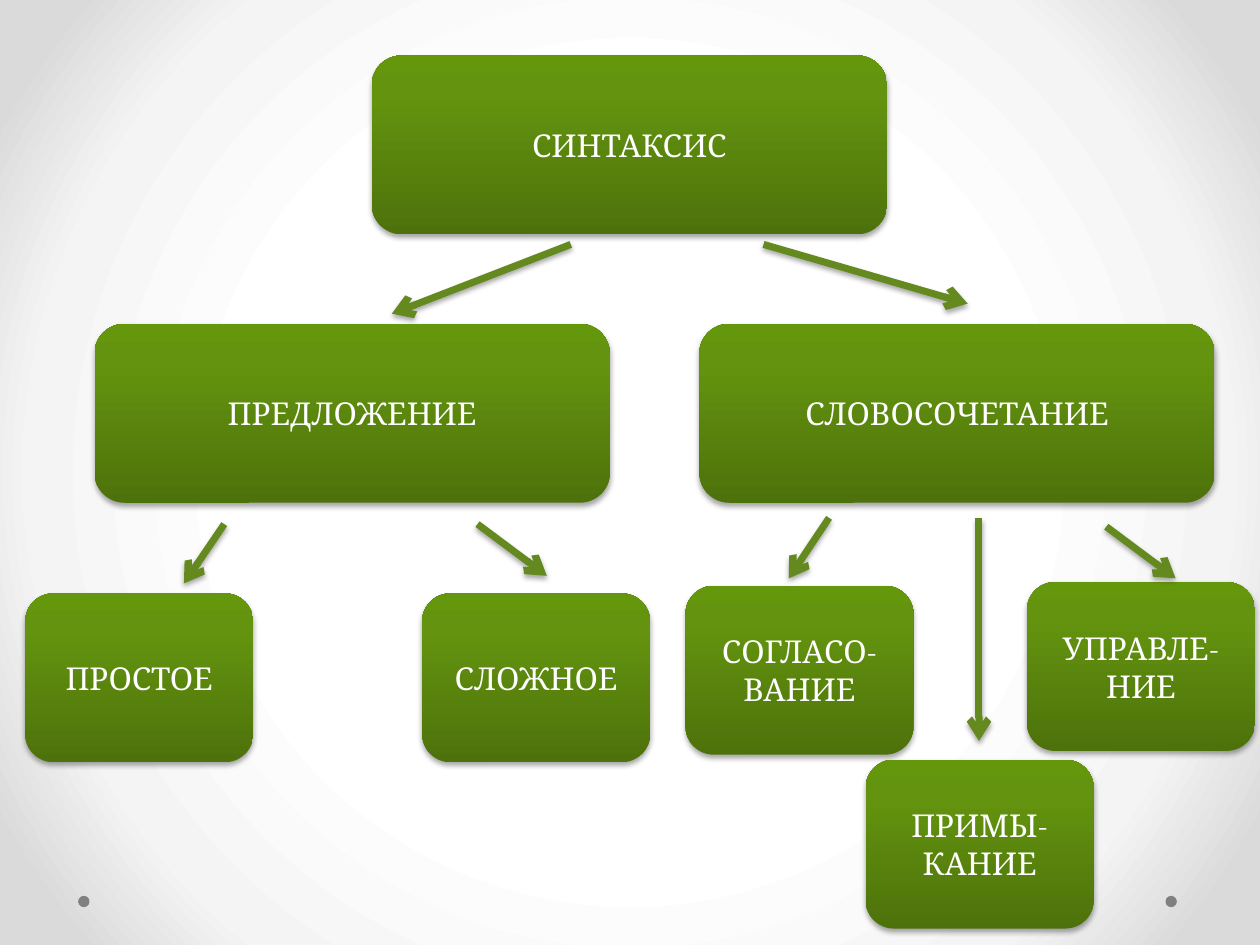
from lxml import etree
from pptx import Presentation
from pptx.dml.color import RGBColor
from pptx.enum.shapes import MSO_CONNECTOR, MSO_SHAPE
from pptx.enum.text import PP_ALIGN
from pptx.oxml import parse_xml
from pptx.oxml.ns import nsdecls, qn
from pptx.util import Inches, Pt

ROUNDED = MSO_SHAPE.ROUNDED_RECTANGLE
OVAL = MSO_SHAPE.OVAL
STRAIGHT = MSO_CONNECTOR.STRAIGHT
CENTER = PP_ALIGN.CENTER

WHITE = RGBColor(0xFF, 0xFF, 0xFF)
PALE_GRAY = RGBColor(0xF4, 0xF4, 0xF4)
LIGHT_GRAY = RGBColor(0xDA, 0xDA, 0xDA)
DOT_GRAY = RGBColor(0x80, 0x80, 0x80)
BLACK = RGBColor(0, 0, 0)
DARK_GREEN = RGBColor(0x4D, 0x72, 0x0B)
GREEN = RGBColor(0x64, 0x94, 0x0F)
BRIGHT_GREEN = RGBColor(0x65, 0x97, 0x0C)
ARROW_GREEN = RGBColor(0x63, 0x89, 0x1F)

BOX_STOPS = [(0, DARK_GREEN), (80, GREEN), (100, BRIGHT_GREEN)]
BACKGROUND_STOPS = [(50, WHITE), (76, PALE_GRAY), (92, LIGHT_GRAY)]
UPWARD = '<a:lin ang="16200000" scaled="0"/>'
FROM_CENTER = ('<a:path path="circle"><a:fillToRect l="50000" t="50000" '
               'r="50000" b="50000"/></a:path>')

PARENT_SIZE = (4.09, 1.42)
CHILD_SIZE = (1.81, 1.34)


def gradient(stops, direction):
    """Return a gradient fill element."""
    stop_list = "".join(
        f'<a:gs pos="{position * 1000}"><a:srgbClr val="{color}"/></a:gs>'
        for position, color in stops)
    return parse_xml(f'<a:gradFill {nsdecls("a")} rotWithShape="1">'
                     f'<a:gsLst>{stop_list}</a:gsLst>{direction}</a:gradFill>')


def add_shadow(shape):
    """Give a shape or connector a soft shadow below it."""
    shape._element.spPr.append(parse_xml(
        f'<a:effectLst {nsdecls("a")}><a:outerShdw blurRad="{Pt(3.1)}" '
        f'dist="{Pt(1.8)}" dir="5400000" rotWithShape="0">'
        f'<a:srgbClr val="{BLACK}"><a:alpha val="35000"/></a:srgbClr>'
        '</a:outerShdw></a:effectLst>'))


def add_box(slide, left, top, size, text):
    """Add a green rounded box with centred text."""
    box = slide.shapes.add_shape(ROUNDED, Inches(left), Inches(top),
                                 *map(Inches, size))
    box.fill.background()
    properties = box._element.spPr
    properties.replace(properties.find(qn("a:noFill")),
                       gradient(BOX_STOPS, UPWARD))
    box.line.fill.background()
    add_shadow(box)
    paragraph = box.text_frame.paragraphs[0]
    paragraph.text = text
    paragraph.alignment = CENTER
    paragraph.font.name = "Cambria"
    paragraph.font.size = Pt(18)
    paragraph.font.color.rgb = WHITE


def add_arrow(slide, left, top, start, end):
    """Add an arrow between two points relative to a corner."""
    points = [Inches(corner + offset) for point in (start, end)
              for corner, offset in zip((left, top), point)]
    arrow = slide.shapes.add_connector(STRAIGHT, *points)
    arrow.line.color.rgb = ARROW_GREEN
    arrow.line.width = Pt(4)
    etree.SubElement(arrow.line._get_or_add_ln(), qn("a:tailEnd"), type="arrow")
    add_shadow(arrow)


def add_branch(slide, left, top, title, indent, children, arrows):
    """Add a parent box with its child boxes and arrows."""
    add_box(slide, left + indent, top, PARENT_SIZE, title)
    for text, across, down in children:
        add_box(slide, left + across, top + down, CHILD_SIZE, text)
    for start, end in arrows:
        add_arrow(slide, left, top, start, end)


def add_background(slide):
    """Add the radial background and the two corner dots."""
    slide.background.fill.solid()
    fill = slide._element.cSld.find(".//" + qn("a:solidFill"))
    fill.getparent().replace(fill, gradient(BACKGROUND_STOPS, FROM_CENTER))
    for left in (0.62, 9.25):
        dot = slide.shapes.add_shape(OVAL, Inches(left), Inches(7.11),
                                     Inches(0.09), Inches(0.09))
        dot.shadow.inherit = False
        dot.fill.solid()
        dot.fill.fore_color.rgb = DOT_GRAY
        dot.line.fill.background()


def main():
    """Build the syntax diagram and save it."""
    presentation = Presentation()
    presentation.slide_width = Inches(10)
    presentation.slide_height = Inches(7.5)
    slide = presentation.slides.add_slide(presentation.slide_layouts[6])
    add_background(slide)
    add_branch(slide, 2.95, 0.44, "СИНТАКСИС", 0, [],
               [((1.58, 1.5), (0.16, 2.05)), ((3.11, 1.5), (4.73, 1.97))])
    add_branch(slide, 0.2, 2.57, "ПРЕДЛОЖЕНИЕ", 0.55,
               [("ПРОСТОЕ", 0, 2.14), ("СЛОЖНОЕ", 3.15, 2.14)],
               [((1.58, 1.59), (1.26, 2.06)), ((3.59, 1.59), (4.14, 2))])
    add_branch(slide, 5.44, 2.57, "СЛОВОСОЧЕТАНИЕ", 0.11,
               [("СОГЛАСО-ВАНИЕ", 0, 2.08), ("УПРАВЛЕ-НИЕ", 2.71, 2.05),
                ("ПРИМЫ-КАНИЕ", 1.43, 3.46)],
               [((1.14, 1.54), (0.82, 2.02)), ((3.34, 1.61), (3.89, 2.02)),
                ((2.33, 1.54), (2.33, 3.31))])
    presentation.save("out.pptx")


if __name__ == "__main__":
    main()
